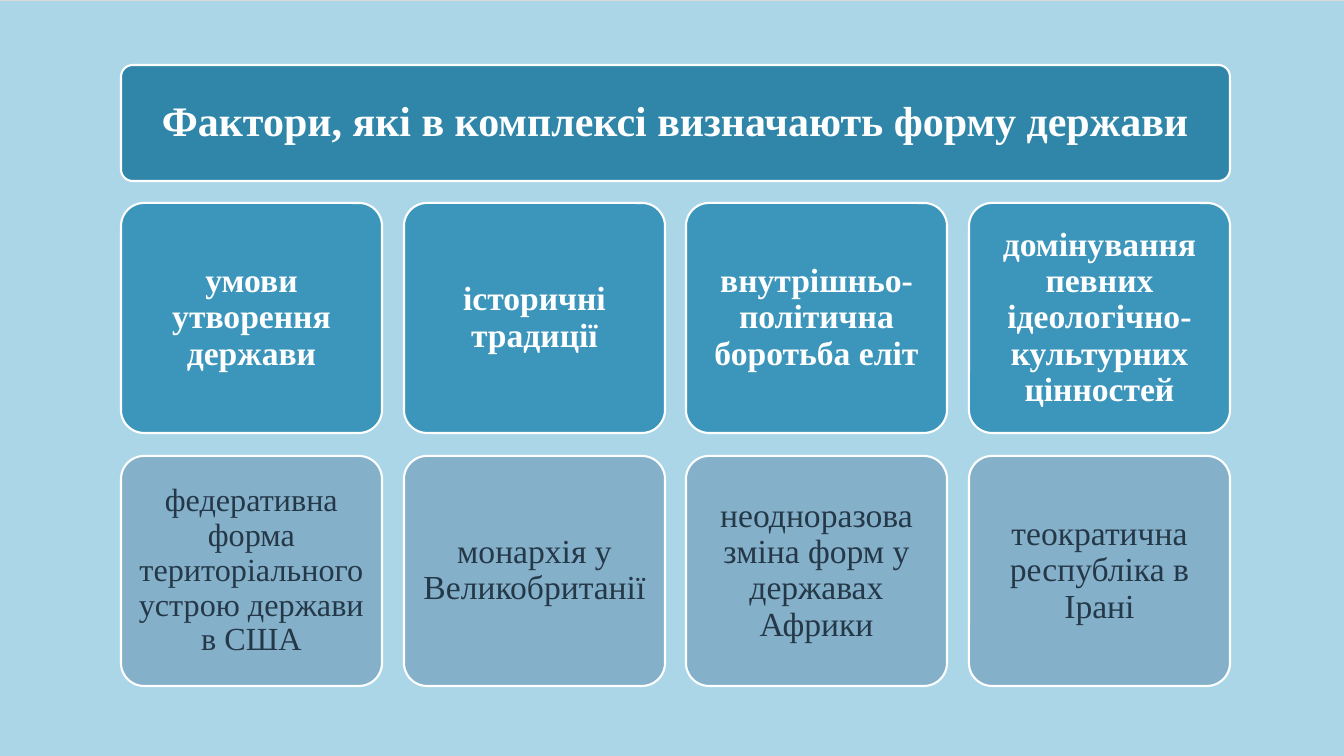
from pptx import Presentation
from pptx.dml.color import RGBColor
from pptx.enum.dml import MSO_PATTERN
from pptx.enum.shapes import MSO_SHAPE
from pptx.enum.text import MSO_ANCHOR, MSO_AUTO_SIZE, PP_ALIGN
from pptx.util import Emu, Pt

WHITE = RGBColor(0xFF, 0xFF, 0xFF)
GREY = RGBColor(0xD9, 0xD9, 0xD9)
PALE_BLUE = RGBColor(0xAA, 0xD6, 0xE7)
DEEP_BLUE = RGBColor(0x2F, 0x86, 0xA9)
MID_BLUE = RGBColor(0x3C, 0x96, 0xBB)
SOFT_BLUE = RGBColor(0x84, 0xB0, 0xCA)
NAVY = RGBColor(0x25, 0x38, 0x48)

LEFT, WIDTH = 121, 1109
CARD_W, CARD_H = 261, 230
FACTOR_TOP, EXAMPLE_TOP = 203, 456

# Factor, its example, and the example's font size
COLUMNS = [
    ("умови утворення держави",
     "федеративна форма територіального устрою держави в США", 23),
    ("історичні традиції", "монархія у Великобританії", 24),
    ("внутрішньо-політична боротьба еліт",
     "неодноразова зміна форм у державах Африки", 24),
    ("домінування певних ідеологічно-культурних цінностей",
     "теократична республіка в Ірані", 24),
]


def px(n):
    return Emu(round(n * 12192000 / 1344))


def write(sp, text, size, color, bold, inset):
    """Fill a shape with one centred paragraph."""
    tf = sp.text_frame
    tf.word_wrap = True
    tf.auto_size = MSO_AUTO_SIZE.NONE
    tf.vertical_anchor = MSO_ANCHOR.MIDDLE
    tf.margin_left = tf.margin_right = px(inset)
    tf.margin_top = tf.margin_bottom = px(inset)
    tf.text = text
    p = tf.paragraphs[0]
    p.alignment = PP_ALIGN.CENTER
    p.line_spacing = 0.9
    p.font.name = "Times New Roman"
    p.font.size = Pt(size)
    p.font.bold = bold
    p.font.color.rgb = color


prs = Presentation()
prs.slide_width, prs.slide_height = px(1344), px(756)
s = prs.slides.add_slide(prs.slide_layouts[5])

bg = s.background.fill
bg.patterned()
bg.pattern = MSO_PATTERN.DARK_HORIZONTAL
bg.fore_color.rgb = PALE_BLUE
bg.back_color.rgb = GREY

# Left, top, width, height, fill, text arguments
boxes = [(LEFT, 65, WIDTH, 116, DEEP_BLUE, None)]
for i, (factor, example, size) in enumerate(COLUMNS):
    x = LEFT + round(i * (WIDTH - CARD_W) / (len(COLUMNS) - 1))
    boxes += [
        (x, FACTOR_TOP, CARD_W, CARD_H, MID_BLUE, (factor, 24, WHITE, True)),
        (x, EXAMPLE_TOP, CARD_W, CARD_H, SOFT_BLUE,
         (example, size, NAVY, False)),
    ]

for x, y, w, h, fill, label in boxes:
    sp = s.shapes.add_shape(MSO_SHAPE.ROUNDED_RECTANGLE,
                            px(x), px(y), px(w), px(h))
    sp.adjustments[0] = 0.1
    sp.shadow.inherit = False
    sp.fill.solid()
    sp.fill.fore_color.rgb = fill
    sp.line.color.rgb = WHITE
    sp.line.width = Pt(1.5)
    if label:
        write(sp, *label, inset=10)

# The title sits in front of its panel
title = s.shapes.title
title.left, title.top, title.width, title.height = (
    px(125), px(69), px(1101), px(108))
write(title, "Фактори, які в комплексі визначають форму держави",
      30, WHITE, True, inset=12)
s.shapes._spTree.append(title._element)

prs.save("out.pptx")
